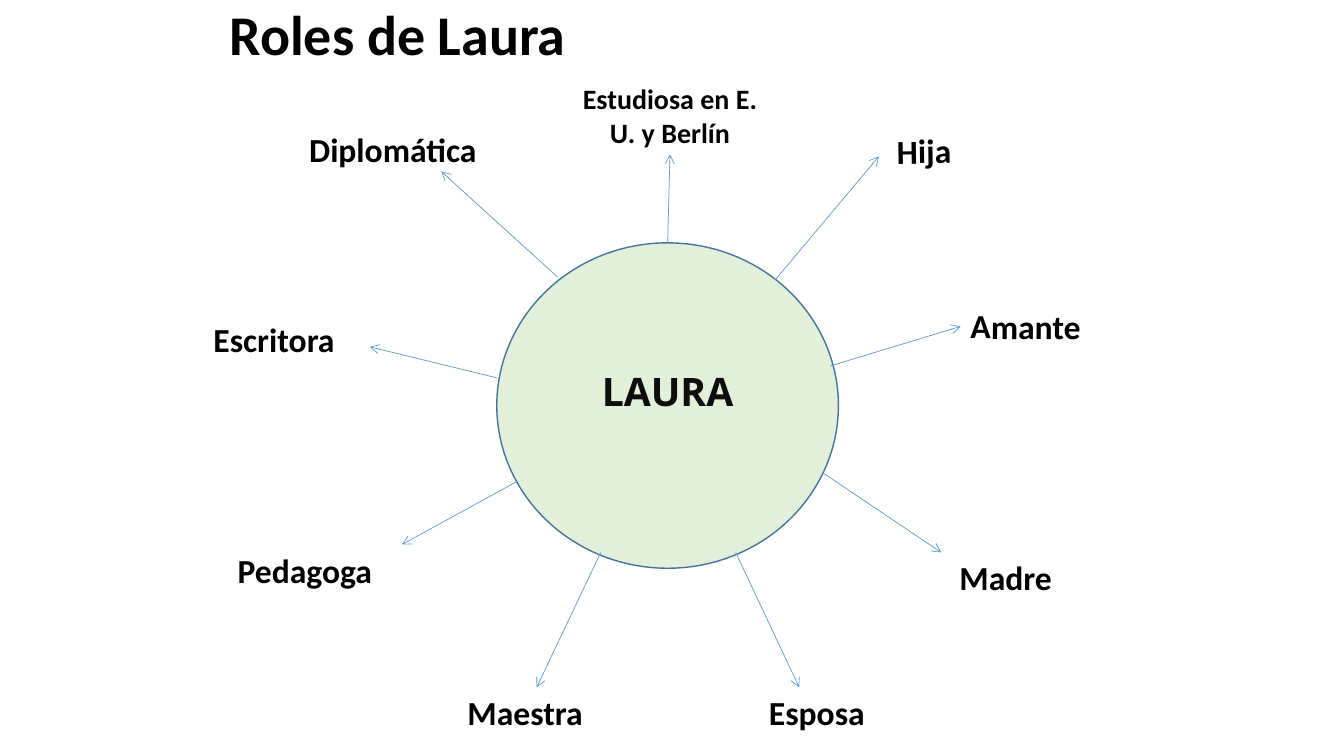
import pptx
import pptx.util
import pptx.dml.color
import pptx.enum.shapes
import pptx.enum.text
import pptx.oxml
import pptx.oxml.ns
from pptx.util import Cm

BLACK = pptx.dml.color.RGBColor(0x00, 0x00, 0x00)
INK = pptx.dml.color.RGBColor(0x0D, 0x0D, 0x0D)
PALE_GREEN = pptx.dml.color.RGBColor(0xE2, 0xF0, 0xD9)
OUTLINE = pptx.dml.color.RGBColor(0x43, 0x73, 0x9E)
ARROW = pptx.dml.color.RGBColor(0x5B, 0x9B, 0xD5)
CENTER = pptx.enum.text.PP_ALIGN.CENTER
MIDDLE = pptx.enum.text.MSO_ANCHOR.MIDDLE

# In cm from the wheel's corner: label, its left, top and width,
# arrow start, arrow end, and the label side the arrow joins (if any)
ROLES = [
    ("Estudiosa en E. U. y Berlín", (9.19, 0, 5.13), (11.7, 4.19), (11.76, 1.96), 2),
    ("Hija", (17.22, 1.22, 2.57), (14.4, 5.13), (17.02, 2.01), None),
    ("Amante", (19.08, 5.66, 4.39), (15.8, 7.29), (19.08, 6.3), 1),
    ("Madre", (18.8, 11.99, 3.4), (15.6, 9.98), (18.59, 11.99), None),
    ("Esposa", (14, 15.39, 3.61), (13.41, 11.99), (15.01, 15.39), None),
    ("Maestra", (6.4, 15.39, 3.99), (10.01, 11.99), (8.41, 15.39), 0),
    ("Pedagoga", (0.61, 11.79, 4.75), (7.92, 10.19), (5, 11.79), None),
    ("Escritora", (0, 5.99, 4.22), (7.39, 7.59), (4.19, 6.81), None),
    ("Diplomática", (2.41, 1.19, 5.41), (8.92, 5.05), (5.99, 2.39), None),
]
TILTS = {"Hija": -0.8, "Amante": 0.6}


def write(s, text, size, font="Calibri", color=BLACK):
    tf = s.text_frame
    tf.word_wrap = True
    tf.text = text
    p = tf.paragraphs[0]
    f = p.runs[0].font
    f.name, f.size, f.bold = font, pptx.util.Pt(size), True
    f.color.rgb = color
    return p


def add_title(slide, left, top, width, height):
    s = slide.shapes.add_textbox(left, top, width, height)
    write(s, "Roles de Laura", 40).line_spacing = 0.9
    s.text_frame.vertical_anchor = MIDDLE


def add_hub(slide, left, top, width, height):
    s = slide.shapes.add_shape(
        pptx.enum.shapes.MSO_SHAPE.OVAL, left, top, width, height)
    s.shadow.inherit = False
    s.fill.solid()
    s.fill.fore_color.rgb = PALE_GREEN
    s.line.color.rgb = OUTLINE
    s.line.width = pptx.util.Pt(1)
    write(s, "LAURA", 28, "Open Sans", INK).alignment = CENTER
    s.text_frame.vertical_anchor = MIDDLE
    s.text_frame.margin_bottom = Cm(0.89)  # lifts the name above the centre
    return s


def add_arrow(slide, x1, y1, x2, y2):
    c = slide.shapes.add_connector(
        pptx.enum.shapes.MSO_CONNECTOR.STRAIGHT, x1, y1, x2, y2)
    c.line.color.rgb = ARROW
    c.line.width = pptx.util.Pt(0.5)
    tail = pptx.oxml.parse_xml(
        '<a:tailEnd %s type="arrow"/>' % pptx.oxml.ns.nsdecls("a"))
    c.line._get_or_add_ln().append(tail)
    c._element.spPr.append(pptx.oxml.parse_xml(
        "<a:effectLst %s/>" % pptx.oxml.ns.nsdecls("a")))
    return c


def add_role_wheel(slide, left, top):
    """Central circle with one arrow and label per role."""
    def at(x, y):
        return left + Cm(x), top + Cm(y)

    hub = add_hub(slide, *at(7.39, 4.19), Cm(8.61), Cm(8.2))
    for label, (x, y, width), start, end, side in ROLES:
        is_top = side == 2  # the two-line label straight above the circle
        s = slide.shapes.add_textbox(
            *at(x, y), Cm(width), Cm(1.96 if is_top else 1.27))
        p = write(s, label, 20 if is_top else 24)
        s.rotation = TILTS.get(label, 0)
        arrow = add_arrow(slide, *at(*start), *at(*end))
        if side is not None:
            arrow.end_connect(s, side)
        if is_top:
            p.alignment = CENTER
            arrow.begin_connect(hub, 0)


def main():
    prs = pptx.Presentation()
    prs.slide_width, prs.slide_height = Cm(33.87), Cm(19.05)
    slide = prs.slides.add_slide(prs.slide_layouts[6])
    add_title(slide, Cm(5.54), Cm(0), Cm(16.08), Cm(1.9))
    add_role_wheel(slide, Cm(5.13), Cm(1.93))
    prs.save("out.pptx")


if __name__ == "__main__":
    main()
